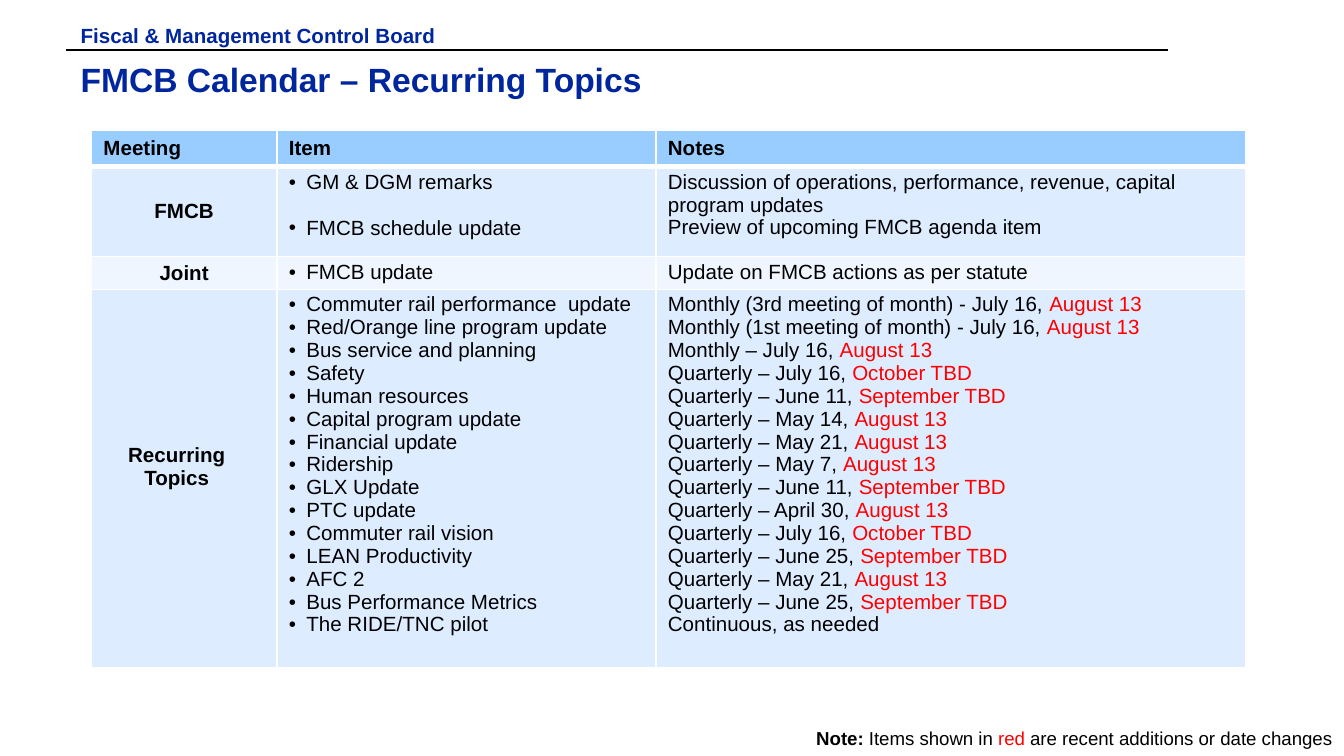
from dataclasses import dataclass

from lxml.etree import SubElement as Sub
from pptx import Presentation as Deck
from pptx.dml.color import RGBColor as Color
from pptx.enum.shapes import MSO_CONNECTOR as Link
from pptx.enum.text import MSO_ANCHOR as Anchor, PP_ALIGN as Align
from pptx.oxml.ns import qn
from pptx.util import Inches, Pt


@dataclass(frozen=True)
class Theme:
    font: str = "Arial"
    navy: str = "00269E"
    black: str = "000000"
    red: str = "FF0000"
    white: str = "FFFFFF"
    head: str = "99CCFF"
    band: str = "DEECFF"
    pale: str = "EFF6FF"
    title: float = 18
    body: float = 11
    note: float = 10


LOOK = Theme()

TOPICS = [
    ("Commuter rail performance  update", "Monthly (3rd meeting of month) - July 16, ", "August 13"),
    ("Red/Orange line program update", "Monthly (1st meeting of month) - July 16, ", "August 13"),
    ("Bus service and planning", "Monthly – July 16, ", "August 13"),
    ("Safety", "Quarterly – July 16, ", "October TBD"),
    ("Human resources", "Quarterly – June 11, ", "September TBD"),
    ("Capital program update", "Quarterly – May 14, ", "August 13"),
    ("Financial update", "Quarterly – May 21, ", "August 13"),
    ("Ridership", "Quarterly – May 7, ", "August 13"),
    ("GLX Update", "Quarterly – June 11, ", "September TBD"),
    ("PTC update", "Quarterly – April 30, ", "August 13"),
    ("Commuter rail vision", "Quarterly – July 16, ", "October TBD"),
    ("LEAN Productivity", "Quarterly – June 25, ", "September TBD"),
    ("AFC 2", "Quarterly – May 21, ", "August 13"),
    ("Bus Performance Metrics", "Quarterly – June 25, ", "September TBD"),
    ("The RIDE/TNC pilot", "Continuous, as needed", ""),
]

# Meeting, items, notes as (black, red) pairs, fill
ROWS = [
    (["FMCB"], ["GM & DGM remarks", "FMCB schedule update"],
     [("Discussion of operations, performance, revenue, capital program updates", ""),
      ("Preview of upcoming FMCB agenda item", "")], LOOK.band),
    (["Joint"], ["FMCB update"],
     [("Update on FMCB actions as per statute", "")], LOOK.pale),
    (["Recurring", "Topics"], [item for item, _, _ in TOPICS],
     [(when, due) for _, when, due in TOPICS], LOOK.band),
]


def style(run, size, color, bold=False):
    font = run.font
    font.name, font.size, font.bold = LOOK.font, Pt(size), bold
    font.color.rgb = Color.from_string(color)


def add_runs(para, parts, size):
    for text, color, bold in parts:
        if text:
            run = para.add_run()
            run.text = text
            style(run, size, color, bold)


def add_label(slide, box, parts, size, inset=0.04, align=Align.LEFT):
    frame = slide.shapes.add_textbox(*map(Inches, box)).text_frame
    frame.word_wrap = True
    frame.margin_left = frame.margin_right = Inches(0.09)
    frame.margin_top, frame.margin_bottom = Inches(inset), Inches(0.04)
    para = frame.paragraphs[0]
    para.alignment = align
    add_runs(para, parts, size)


def add_rule(slide, left, right, top):
    line = slide.shapes.add_connector(
        Link.STRAIGHT, Inches(left), Inches(top), Inches(right), Inches(top))
    line.line.color.rgb = Color.from_string(LOOK.black)
    line.line.width = Pt(1)
    Sub(line._element.spPr, qn("a:effectLst"))


def set_edges(cell, top=1, bottom=1):
    props = cell._tc.get_or_add_tcPr()
    for side, width in (("L", 1), ("R", 1), ("T", top), ("B", bottom)):
        edge = Sub(props, qn("a:ln" + side), w=str(Pt(width)))
        paint = Sub(edge, qn("a:solidFill"))
        Sub(paint, qn("a:srgbClr"), val=LOOK.white)


def fill_cell(cell, lines, fill, top=1, bottom=1, align=Align.LEFT,
              anchor=Anchor.TOP, bullet=False):
    set_edges(cell, top, bottom)
    cell.fill.solid()
    cell.fill.fore_color.rgb = Color.from_string(fill)
    cell.vertical_anchor = anchor
    cell.margin_left = cell.margin_right = Inches(0.09)
    cell.margin_top = cell.margin_bottom = Inches(0.03)
    frame = cell.text_frame
    for i, parts in enumerate(lines):
        para = frame.add_paragraph() if i else frame.paragraphs[0]
        para.alignment = align
        if bullet:
            add_bullet(para)
        add_runs(para, parts, LOOK.body)


def add_bullet(para):
    props = para._p.get_or_add_pPr()
    props.set("marL", str(Inches(0.13)))
    props.set("indent", str(-Inches(0.13)))
    Sub(props, qn("a:buFont"), typeface=LOOK.font)
    Sub(props, qn("a:buChar"), char="•")


def add_grid(slide):
    widths, heights = (1.38, 2.82, 4.39), (0.27, 0.67, 0.24, 2.8)
    grid = slide.shapes.add_table(
        len(heights), len(widths), Inches(0.68), Inches(0.97),
        Inches(sum(widths)), Inches(sum(heights))).table
    for col, width in zip(grid.columns, widths):
        col.width = Inches(width)
    for row, height in zip(grid.rows, heights):
        row.height = Inches(height)

    # Header row
    for col, name in enumerate(("Meeting", "Item", "Notes")):
        fill_cell(grid.cell(0, col), [[(name, LOOK.black, True)]], LOOK.head,
                  bottom=3, anchor=Anchor.MIDDLE)

    # Body rows
    for row, (names, items, notes, fill) in enumerate(ROWS, 1):
        top = 3 if row == 1 else 1
        fill_cell(grid.cell(row, 0), [[(name, LOOK.black, True)] for name in names],
                  fill, top, align=Align.CENTER, anchor=Anchor.MIDDLE)
        fill_cell(grid.cell(row, 1), [[(item, LOOK.black, False)] for item in items],
                  fill, top, bullet=True)
        fill_cell(grid.cell(row, 2),
                  [[(when, LOOK.black, False), (due, LOOK.red, False)]
                   for when, due in notes], fill, top)

    # Line up the second item with its note, and lift the last label
    grid.cell(1, 1).text_frame.paragraphs[1].space_before = Pt(12.3)
    label = grid.cell(3, 0)
    label.margin_right, label.margin_bottom = Inches(0.2), Inches(0.2)


def main():
    # Widescreen page, 16 to 9
    deck = Deck()
    deck.slide_width = Inches(10)
    deck.slide_height = Inches(10 * 9 / 16)
    slide = deck.slides.add_slide(deck.slide_layouts[6])

    # Heading
    add_rule(slide, 0.49, 8.69, 0.37)
    add_label(slide, (0.51, 0.4, 8.36, 0.48),
              [("FMCB Calendar – Recurring Topics", LOOK.navy, True)],
              LOOK.title)
    add_label(slide, (0.51, 0.12, 3.41, 0.19),
              [("Fiscal & Management Control Board", LOOK.navy, True)],
              LOOK.body, inset=0.05)

    # Calendar
    add_grid(slide)

    # Footnote
    add_label(slide, (5.8, 5.37, 4.2, 0.26),
              [("Note: ", LOOK.black, True), ("Items shown in ", LOOK.black, False),
               ("red", LOOK.red, False),
               (" are recent additions or date changes", LOOK.black, False)],
              LOOK.note, align=Align.RIGHT)

    deck.save("out.pptx")


if __name__ == "__main__":
    main()
